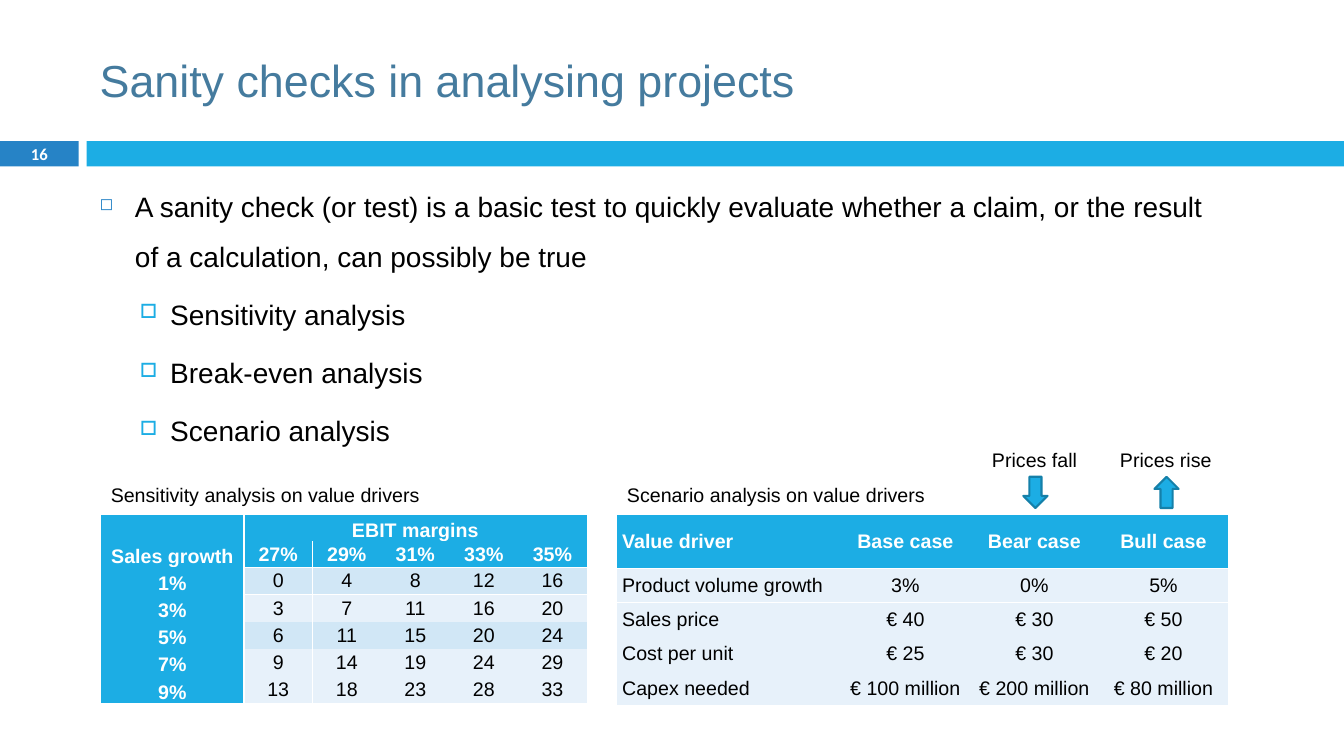
from lxml.etree import SubElement
from pptx import Presentation
from pptx.dml.color import RGBColor
from pptx.enum.shapes import MSO_SHAPE as Preset
from pptx.enum.text import MSO_ANCHOR as Anchor, PP_ALIGN as Align
from pptx.oxml import parse_xml
from pptx.oxml.ns import nsdecls, qn
from pptx.util import Inches, Pt

WHITE = RGBColor(0xFF, 0xFF, 0xFF)
BLACK = RGBColor(0x00, 0x00, 0x00)
TITLE_BLUE = RGBColor(0x45, 0x7B, 0x9E)
DEEP_BLUE = RGBColor(0x26, 0x83, 0xC6)
BRIGHT_BLUE = RGBColor(0x1C, 0xAD, 0xE4)
ARROW_EDGE = RGBColor(0x15, 0x80, 0xA9)
BAND = RGBColor(0xD1, 0xE7, 0xF6)
PALE = RGBColor(0xE7, 0xF1, 0xFA)
PLAIN_TABLE = "{2D5ABB26-0587-4C30-8999-92F81FD0307C}"

POINTS = [
    (0, "A sanity check (or test) is a basic test to quickly evaluate whether a claim, "
        "or the result of a calculation, can possibly be true"),
    (1, "Sensitivity analysis"),
    (1, "Break-even analysis"),
    (1, "Scenario analysis"),
]
LEVELS = [(0.35, -0.35, 7, "◻", DEEP_BLUE, 60), (0.7, -0.3, 5.5, "□", BRIGHT_BLUE, 70)]
SENSITIVITY = [
    ["", "EBIT margins", "", "", "", ""],
    ["Sales growth", "27%", "29%", "31%", "33%", "35%"],
    ["1%", "0", "4", "8", "12", "16"],
    ["3%", "3", "7", "11", "16", "20"],
    ["5%", "6", "11", "15", "20", "24"],
    ["7%", "9", "14", "19", "24", "29"],
    ["9%", "13", "18", "23", "28", "33"],
]
SENSITIVITY_FILLS = [BRIGHT_BLUE, BRIGHT_BLUE, BAND, PALE, BAND, PALE, PALE]
SCENARIO = [
    ["Value driver", "Base case", "Bear case", "Bull case"],
    ["Product volume growth", "3%", "0%", "5%"],
    ["Sales price", "€ 40", "€ 30", "€ 50"],
    ["Cost per unit", "€ 25", "€ 30", "€ 20"],
    ["Capex needed", "€ 100 million", "€ 200 million", "€ 80 million"],
]


class SlideBuilder:
    """Draws styled elements on one slide."""

    def __init__(self, slide, face="Arial"):
        self.slide = slide
        self.face = face

    def style(self, paragraph, size, color, bold=False, face=None):
        font = paragraph.font
        font.name, font.size, font.bold = face or self.face, Pt(size), bold
        font.color.rgb = color

    def shape(self, preset, left, top, width, height, fill, edge=None):
        shape = self.slide.shapes.add_shape(
            preset, Inches(left), Inches(top), Inches(width), Inches(height))
        shape.shadow.inherit = False
        shape.fill.solid()
        shape.fill.fore_color.rgb = fill
        if edge is None:
            shape.line.fill.background()
        else:
            shape.line.color.rgb, shape.line.width = edge, Pt(1.5)

    def frame(self, left, top, width, height, anchor=Anchor.TOP, wrap=True):
        frame = self.slide.shapes.add_textbox(
            Inches(left), Inches(top), Inches(width), Inches(height)).text_frame
        frame.word_wrap, frame.vertical_anchor = wrap, anchor
        return frame

    def text(self, wording, box, size, color=BLACK, align=Align.LEFT,
             anchor=Anchor.TOP, bold=False, face=None, wrap=True):
        paragraph = self.frame(*box, anchor, wrap).paragraphs[0]
        paragraph.text, paragraph.alignment = wording, align
        self.style(paragraph, size, color, bold, face)

    def label(self, wording, left, top, width):
        self.text(wording, (left, top, width, 0.34), 14, wrap=False)

    def outline(self, points, box):
        frame = self.frame(*box)
        for index, (level, wording) in enumerate(points):
            paragraph = frame.add_paragraph() if index else frame.paragraphs[0]
            paragraph.text, paragraph.level = wording, level
            margin, indent, before, mark, color, percent = LEVELS[level]
            paragraph.line_spacing, paragraph.space_before = 1.5, Pt(before)
            props = paragraph._p.get_or_add_pPr()
            props.set("marL", str(Inches(margin)))
            props.set("indent", str(Inches(indent)))
            tint = SubElement(props, qn("a:buClr"))
            SubElement(tint, qn("a:srgbClr"), val=str(color))
            SubElement(props, qn("a:buSzPct"), val=str(percent * 1000))
            SubElement(props, qn("a:buChar"), char=mark)
            self.style(paragraph, 20, BLACK)

    def table(self, rows, left, top, widths, heights):
        frame = self.slide.shapes.add_table(
            len(rows), len(widths), Inches(left), Inches(top),
            Inches(sum(widths)), Inches(sum(heights)))
        table = frame.table
        table._tbl.tblPr.find(qn("a:tableStyleId")).text = PLAIN_TABLE
        for column, width in zip(table.columns, widths):
            column.width = Inches(width)
        for row, height in zip(table.rows, heights):
            row.height = Inches(height)
        return table

    def cell(self, cell, wording, fill, align, gap, heading, anchor=Anchor.MIDDLE, edges=""):
        cell.fill.solid()
        cell.fill.fore_color.rgb = fill
        cell.margin_left = cell.margin_right = Inches(0.05)
        cell.margin_top = cell.margin_bottom = 0
        cell.vertical_anchor = anchor
        paragraph = cell.text_frame.paragraphs[0]
        paragraph.text, paragraph.alignment = wording, align
        paragraph.space_before = paragraph.space_after = Pt(gap)
        self.style(paragraph, 14, WHITE if heading else BLACK, heading)
        for place, edge in enumerate(edges):
            cell._tc.get_or_add_tcPr().insert(place, parse_xml(
                f'<a:ln{edge} {nsdecls("a")} w="12700"><a:solidFill>'
                f'<a:srgbClr val="{WHITE}"/></a:solidFill></a:ln{edge}>'))


def draw_sensitivity(builder):
    table = builder.table(SENSITIVITY, 1, 5.11, [1.42] + [0.68] * 5, [0.26] * 2 + [0.27] * 5)
    for r, (row, fill) in enumerate(zip(SENSITIVITY, SENSITIVITY_FILLS)):
        for c, wording in enumerate(row):
            side = c == 0
            edges = "R" if side else ("L" if c == 1 else "") + {1: "B", 2: "T"}.get(r, "")
            builder.cell(table.cell(r, c), wording, BRIGHT_BLUE if side else fill,
                         Align.CENTER, 1, side or r < 2,
                         Anchor.BOTTOM if side or r == 0 else Anchor.MIDDLE, edges)
    table.cell(0, 1).merge(table.cell(0, 5))


def draw_scenario(builder):
    table = builder.table(SCENARIO, 6.12, 5.11, [2.22] + [1.28] * 3, [0.53] + [0.34] * 4)
    for r, row in enumerate(SCENARIO):
        for c, wording in enumerate(row):
            builder.cell(table.cell(r, c), wording, PALE if r else BRIGHT_BLUE,
                         Align.CENTER if c else Align.JUSTIFY, 2, r == 0,
                         edges={0: "B", 1: "T"}.get(r, ""))


def main():
    deck = Presentation()
    deck.slide_width, deck.slide_height = Inches(13.33), Inches(7.5)
    builder = SlideBuilder(deck.slides.add_slide(deck.slide_layouts[6]))

    builder.shape(Preset.RECTANGLE, 0, 1.4, 0.78, 0.25, DEEP_BLUE)
    builder.shape(Preset.RECTANGLE, 0.86, 1.4, 12.47, 0.25, BRIGHT_BLUE)
    builder.text("Sanity checks in analysing projects", (0.89, 0.25, 11.89, 1.08), 32,
                 TITLE_BLUE, anchor=Anchor.MIDDLE)
    builder.text("16", (0, 1.39, 0.78, 0.27), 11.9, WHITE, Align.CENTER,
                 Anchor.MIDDLE, True, "Calibri")
    builder.outline(POINTS, (0.89, 1.66, 11.36, 5.39))

    builder.label("Sensitivity analysis on value drivers", 1, 4.74, 3.28)
    draw_sensitivity(builder)
    builder.label("Scenario analysis on value drivers", 6.12, 4.74, 3.27)
    draw_scenario(builder)

    builder.label("Prices fall", 9.74, 4.39, 1.05)
    builder.shape(Preset.DOWN_ARROW, 10.15, 4.73, 0.24, 0.31, BRIGHT_BLUE, ARROW_EDGE)
    builder.label("Prices rise", 11.01, 4.39, 1.12)
    builder.shape(Preset.UP_ARROW, 11.45, 4.73, 0.24, 0.31, BRIGHT_BLUE, ARROW_EDGE)
    deck.save("out.pptx")


if __name__ == "__main__":
    main()
